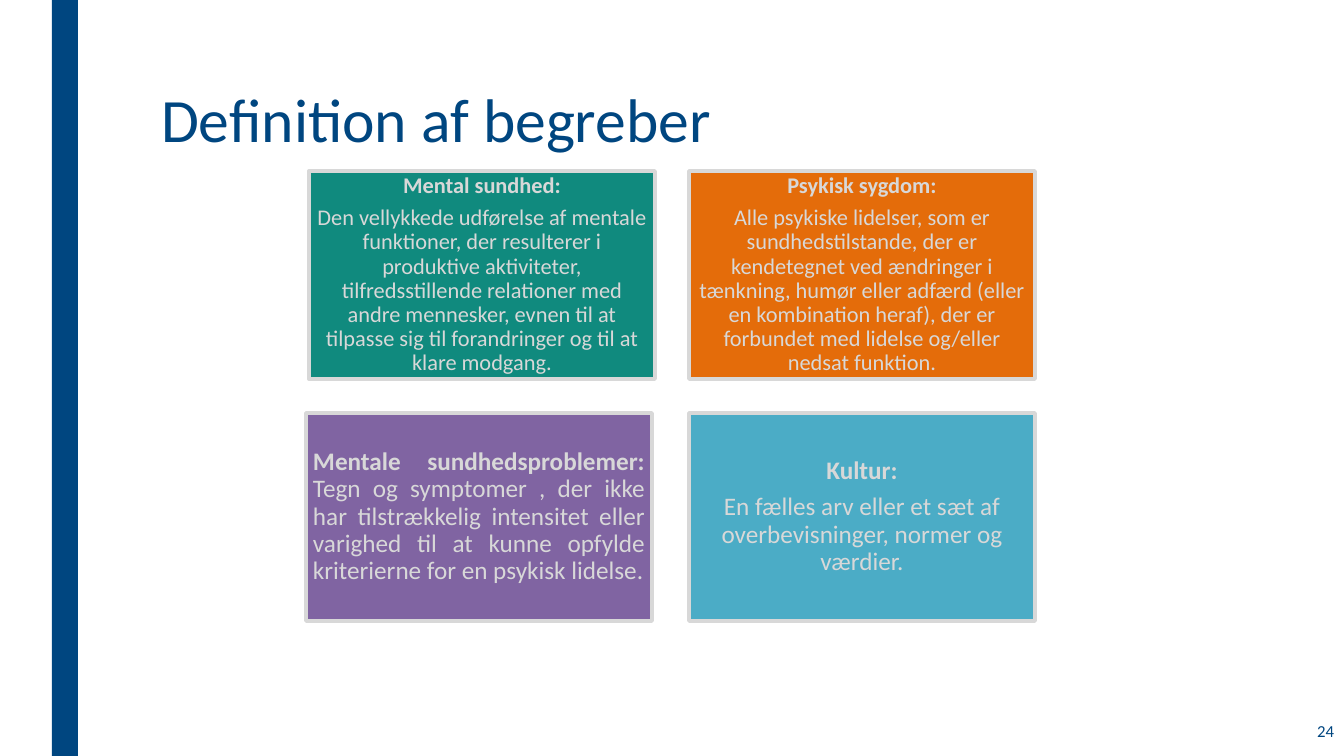
"""Build the slide that defines four mental health concepts."""
from dataclasses import dataclass

from pptx import Presentation
from pptx.dml.color import RGBColor
from pptx.enum.shapes import MSO_SHAPE
from pptx.enum.text import MSO_ANCHOR as Anchor, MSO_AUTO_SIZE as AutoSize, PP_ALIGN as Align
from pptx.util import Pt

EMU_PER_PX = 914400 / 100.8
SLIDE_WIDTH, SLIDE_HEIGHT = 1344, 756
TITLE_ONLY = 5


@dataclass(frozen=True)
class Theme:
    font: str = "Calibri"
    navy: str = "004680"
    grey: str = "D8D8D8"
    teal: str = "108A7E"
    orange: str = "E46C0A"
    purple: str = "8064A2"
    blue: str = "4BACC6"
    title_size: int = 44
    small_size: int = 16
    large_size: int = 18
    number_size: int = 12
    border: float = 2.75


def px(length):
    return round(length * EMU_PER_PX)


class SlideBuilder:
    def __init__(self, slide, theme):
        self.slide = slide
        self.theme = theme

    def style(self, run, size, color, bold=False):
        run.font.name = self.theme.font
        run.font.size = Pt(size)
        run.font.bold = bold
        run.font.color.rgb = RGBColor.from_string(color)

    def rectangle(self, left, top, width, height, fill):
        shape = self.slide.shapes.add_shape(
            MSO_SHAPE.RECTANGLE, px(left), px(top), px(width), px(height))
        shape.shadow.inherit = False
        shape.fill.solid()
        shape.fill.fore_color.rgb = RGBColor.from_string(fill)
        shape.line.fill.background()
        return shape

    def title(self, text, left, top, width, height):
        shape = self.slide.shapes.title
        shape.left, shape.top = px(left), px(top)
        shape.width, shape.height = px(width), px(height)
        frame = shape.text_frame
        frame.text = text
        frame.auto_size = AutoSize.NONE
        frame.vertical_anchor = Anchor.TOP
        paragraph = frame.paragraphs[0]
        paragraph.alignment = Align.LEFT
        self.style(paragraph.runs[0], self.theme.title_size, self.theme.navy)

    def page_number(self, text, left, top, width, height):
        shape = self.slide.shapes.add_textbox(px(left), px(top), px(width), px(height))
        frame = shape.text_frame
        frame.word_wrap = True
        frame.text = text
        frame.vertical_anchor = Anchor.MIDDLE
        paragraph = frame.paragraphs[0]
        paragraph.alignment = Align.RIGHT
        self.style(paragraph.runs[0], self.theme.number_size, self.theme.navy)

    def definition(self, left, top, fill, size, term, meaning, inline=False):
        shape = self.rectangle(left, top, 346, 208, fill)
        shape.line.color.rgb = RGBColor.from_string(self.theme.grey)
        shape.line.width = Pt(self.theme.border)
        frame = shape.text_frame
        frame.word_wrap = True
        frame.vertical_anchor = Anchor.MIDDLE
        frame.margin_left = frame.margin_right = px(7)
        frame.margin_top = frame.margin_bottom = px(7)
        frame.text = term
        first = frame.paragraphs[0]
        last = first if inline else frame.add_paragraph()
        run = last.add_run()
        run.text = f" {meaning}" if inline else meaning
        self.style(first.runs[0], size, self.theme.grey, bold=True)
        self.style(run, size, self.theme.grey)
        for paragraph in frame.paragraphs:
            paragraph.alignment = Align.JUSTIFY if inline else Align.CENTER
            paragraph.line_spacing = 0.9
            paragraph.space_after = Pt(size * 0.35)


def main():
    theme = Theme()
    presentation = Presentation()
    presentation.slide_width = px(SLIDE_WIDTH)
    presentation.slide_height = px(SLIDE_HEIGHT)
    slide = presentation.slides.add_slide(presentation.slide_layouts[TITLE_ONLY])
    builder = SlideBuilder(slide, theme)

    builder.rectangle(52, 0, 26, SLIDE_HEIGHT, theme.navy)
    builder.title("Definition af begreber", 151, 76, 1058, 163)
    builder.page_number("24", 1168, 709, 176, 44)

    builder.definition(
        309, 171, theme.teal, theme.small_size, "Mental sundhed:",
        "Den vellykkede udførelse af mentale funktioner, der resulterer i produktive "
        "aktiviteter, tilfredsstillende relationer med andre mennesker, evnen til at "
        "tilpasse sig til forandringer og til at klare modgang.")
    builder.definition(
        689, 171, theme.orange, theme.small_size, "Psykisk sygdom:",
        "Alle psykiske lidelser, som er sundhedstilstande, der er kendetegnet ved "
        "ændringer i tænkning, humør eller adfærd (eller en kombination heraf), der er "
        "forbundet med lidelse og/eller nedsat funktion.")
    builder.definition(
        306, 413, theme.purple, theme.large_size, "Mentale sundhedsproblemer:",
        "Tegn og symptomer , der ikke har tilstrækkelig intensitet eller varighed til at "
        "kunne opfylde kriterierne for en psykisk lidelse.", inline=True)
    builder.definition(
        689, 413, theme.blue, theme.large_size, "Kultur:",
        "En fælles arv eller et sæt af overbevisninger, normer og værdier.")

    presentation.save("out.pptx")


if __name__ == "__main__":
    main()
